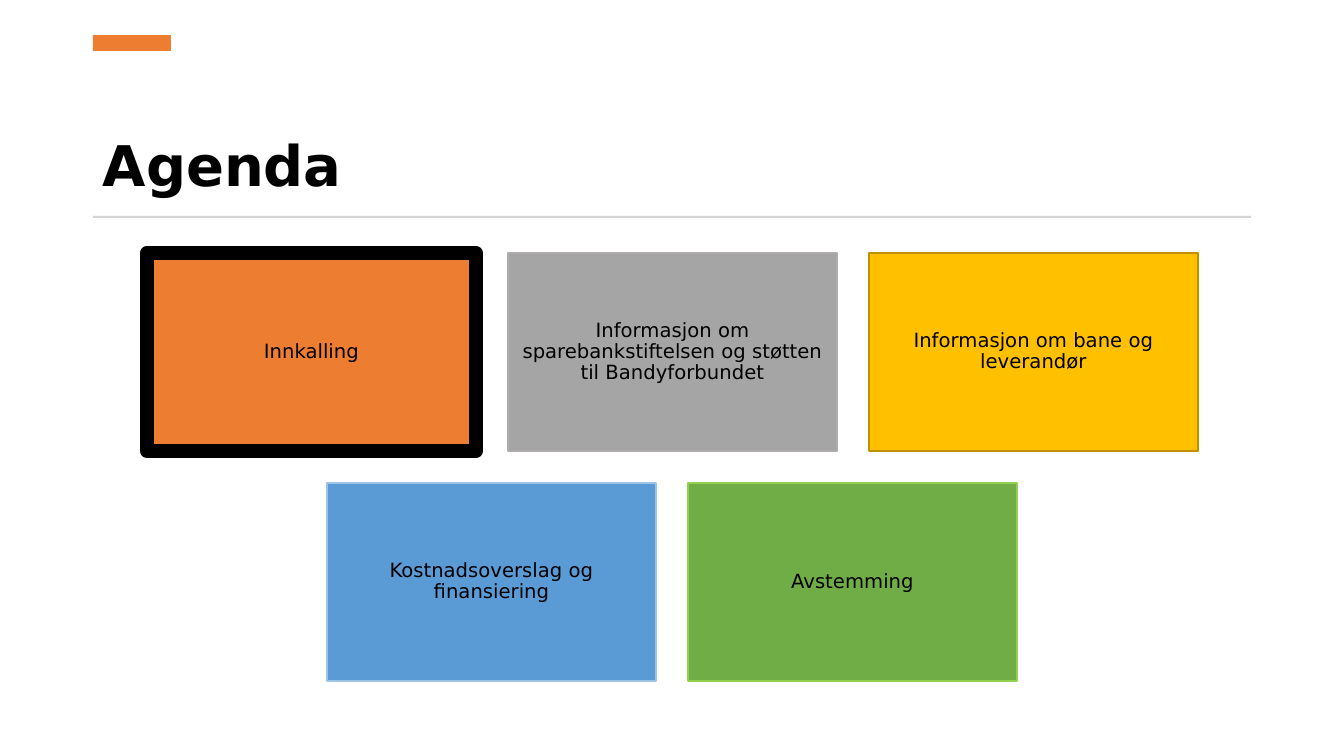
from pptx import Presentation
from pptx.dml.color import RGBColor
from pptx.enum.shapes import MSO_SHAPE as Shape
from pptx.enum.text import MSO_ANCHOR as Anchor, PP_ALIGN as Align
from pptx.util import Pt

PX = 9071.43  # EMU per px, 100.8 px to the inch
FONT = "DejaVu Sans"

BLACK = RGBColor(0x00, 0x00, 0x00)
ORANGE = RGBColor(0xED, 0x7D, 0x31)
RULE_GREY = RGBColor(0xD5, 0xD5, 0xD5)
GREY = RGBColor(0xA5, 0xA5, 0xA5)
GREY_EDGE = RGBColor(0xAF, 0xAB, 0xAB)
GOLD = RGBColor(0xFF, 0xC0, 0x00)
GOLD_EDGE = RGBColor(0xBF, 0x90, 0x00)
BLUE = RGBColor(0x5B, 0x9B, 0xD5)
BLUE_EDGE = RGBColor(0x9D, 0xC3, 0xE6)
GREEN = RGBColor(0x70, 0xAD, 0x47)
GREEN_EDGE = RGBColor(0x92, 0xD0, 0x50)


def px(*lengths):
    return [round(length * PX) for length in lengths]


def add_rectangle(left, top, width, height, color):
    box = page.shapes.add_shape(Shape.RECTANGLE, *px(left, top, width, height))
    box.shadow.inherit = False
    box.fill.solid()
    box.fill.fore_color.rgb = color
    box.line.fill.background()
    return box


deck = Presentation()
deck.slide_width, deck.slide_height = px(1344, 756)
page = deck.slides.add_slide(deck.slide_layouts[6])

# Title
title = page.shapes.add_textbox(*px(93, 76, 1158, 128))
title.text_frame.word_wrap = True
title.text_frame.vertical_anchor = Anchor.BOTTOM
para = title.text_frame.paragraphs[0]
para.text = "Agenda"
para.line_spacing = 0.9
para.font.name = FONT
para.font.size = Pt(40)
para.font.bold = True
para.font.color.rgb = BLACK

# Accent bar and rule
add_rectangle(93, 35, 78, 16, ORANGE)
add_rectangle(93, 216, 1158, 2, RULE_GREY)

# Agenda cards, each row centred: text, fill, edge, edge width in points
CARD_WIDTH, CARD_HEIGHT, GAP = 329, 198, 32
CENTER, FIRST_TOP = 672, 253
rows = [
    [
        ("Innkalling", ORANGE, BLACK, 10),
        ("Informasjon om sparebankstiftelsen og støtten til Bandyforbundet",
         GREY, GREY_EDGE, 1),
        ("Informasjon om bane og leverandør", GOLD, GOLD_EDGE, 1),
    ],
    [
        ("Kostnadsoverslag og finansiering", BLUE, BLUE_EDGE, 1),
        ("Avstemming", GREEN, GREEN_EDGE, 1),
    ],
]
for row, cards in enumerate(rows):
    row_width = len(cards) * (CARD_WIDTH + GAP) - GAP
    row_left = CENTER - row_width // 2
    top = FIRST_TOP + row * (CARD_HEIGHT + GAP)
    for column, (text, color, edge, edge_width) in enumerate(cards):
        left = row_left + column * (CARD_WIDTH + GAP)
        card = add_rectangle(left, top, CARD_WIDTH, CARD_HEIGHT, color)
        card.line.color.rgb = edge
        card.line.width = Pt(edge_width)
        frame = card.text_frame
        frame.word_wrap = True
        frame.vertical_anchor = Anchor.MIDDLE
        frame.margin_left, frame.margin_top = px(6, 6)
        frame.margin_right, frame.margin_bottom = px(6, 6)
        para = frame.paragraphs[0]
        para.text = text
        para.alignment = Align.CENTER
        para.line_spacing = 0.9
        para.font.name = FONT
        para.font.size = Pt(14)
        para.font.color.rgb = BLACK

deck.save("out.pptx")
